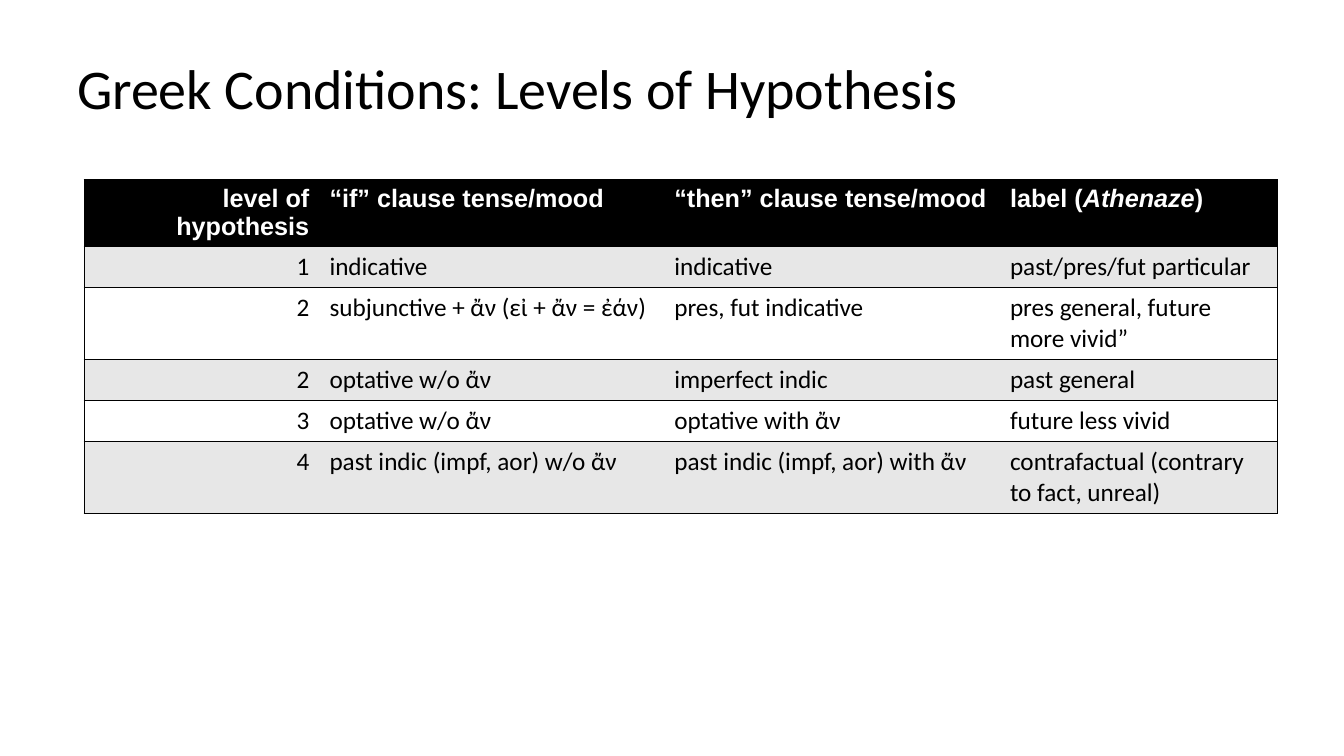
from lxml.etree import SubElement
from pptx import Presentation
from pptx.dml.color import RGBColor
from pptx.enum.text import MSO_ANCHOR as Anchor, PP_ALIGN as Align
from pptx.oxml.ns import qn
from pptx.util import Cm, Pt

BLACK, WHITE, GREY = "000000", "FFFFFF", "E7E7E7"
COLUMN_WIDTHS = [5.93, 8.69, 8.46, 6.99]
ROW_HEIGHT = 1.04

# Asterisks enclose italic words
CONDITIONS = [
    ["level of hypothesis", "“if” clause tense/mood", "“then” clause tense/mood", "label (*Athenaze*)"],
    ["1", "indicative", "indicative", "past/pres/fut particular"],
    ["2", "subjunctive + ἄν (εἰ + ἄν = ἐάν)", "pres, fut indicative", "pres general, future more vivid”"],
    ["2", "optative w/o ἄν", "imperfect indic", "past general"],
    ["3", "optative w/o ἄν", "optative with ἄν", "future less vivid"],
    ["4", "past indic (impf, aor) w/o ἄν", "past indic (impf, aor) with ἄν", "contrafactual (contrary to fact, unreal)"],
]


def color(value):
    return RGBColor.from_string(value)


def set_font(para, name, size, value, bold=False):
    font = para.font
    font.name, font.size, font.bold = name, Pt(size), bold
    font.color.rgb = color(value)


def set_borders(cell, visible):
    """Draw the named sides in black and clear the others."""
    properties = cell._tc.get_or_add_tcPr()
    for side in "LRTB":
        line = SubElement(properties, qn(f"a:ln{side}"), w=str(Pt(1)))
        if side in visible:
            fill = SubElement(line, qn("a:solidFill"))
            SubElement(fill, qn("a:srgbClr"), val=BLACK)
        else:
            SubElement(line, qn("a:noFill"))


def add_title(page, text, left, top, width, height):
    title = page.shapes.title
    title.left, title.top, title.width, title.height = map(Cm, (left, top, width, height))
    frame = title.text_frame
    frame.text = text
    frame.vertical_anchor = Anchor.BOTTOM
    para = frame.paragraphs[0]
    para.alignment = Align.LEFT
    set_font(para, "Calibri", 40, BLACK)


def fill_cell(cell, text, row, column):
    # Lines above and below every row, and around the outside
    sides = "TB"
    if column == 0:
        sides += "L"
    if column == len(COLUMN_WIDTHS) - 1:
        sides += "R"
    set_borders(cell, sides)

    # Black header, then grey and white in turn
    header = row == 0
    cell.fill.solid()
    cell.fill.fore_color.rgb = color(BLACK if header else GREY if row % 2 else WHITE)

    para = cell.text_frame.paragraphs[0]
    para.alignment = Align.RIGHT if column == 0 else Align.LEFT
    set_font(para, "Arial" if header else "Calibri", 18, WHITE if header else BLACK, header)
    for index, part in enumerate(text.split("*")):
        span = para.add_run()
        span.text = part
        if index % 2:
            span.font.italic = True


def add_conditions_table(page, left, top):
    rows, columns = len(CONDITIONS), len(COLUMN_WIDTHS)
    table = page.shapes.add_table(rows, columns, Cm(left), Cm(top),
                                  Cm(sum(COLUMN_WIDTHS)), Cm(rows * ROW_HEIGHT)).table
    for column, width in zip(table.columns, COLUMN_WIDTHS):
        column.width = Cm(width)
    for row, texts in enumerate(CONDITIONS):
        table.rows[row].height = Cm(ROW_HEIGHT)
        for column, text in enumerate(texts):
            fill_cell(table.cell(row, column), text, row, column)


def main():
    deck = Presentation()
    deck.slide_width, deck.slide_height = Cm(33.87), Cm(19.05)
    page = deck.slides.add_slide(deck.slide_layouts[5])
    add_title(page, "Greek Conditions: Levels of Hypothesis", 1.69, 0.21, 30.48, 2.96)
    add_conditions_table(page, 2.12, 4.53)
    deck.save("out.pptx")


if __name__ == "__main__":
    main()
